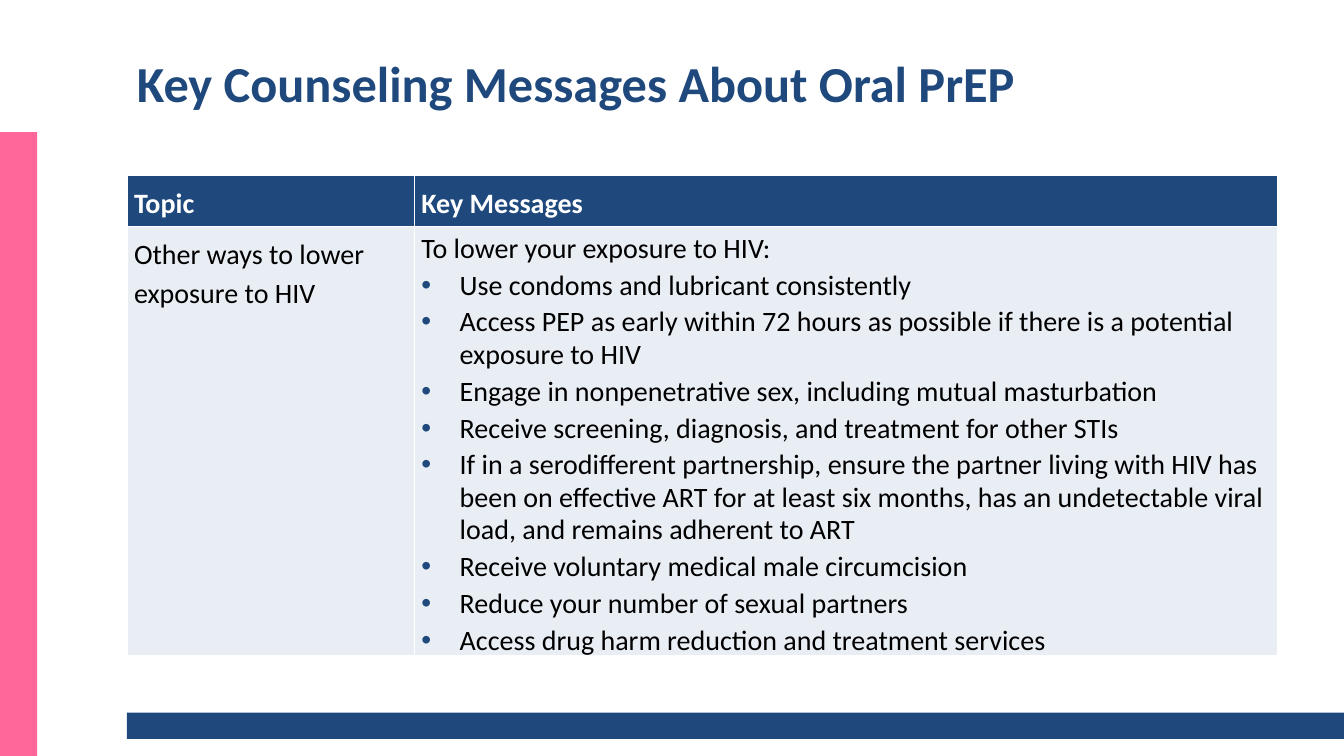
import pptx
import pptx.dml.color
import pptx.enum.shapes
import pptx.enum.text
import pptx.oxml
import pptx.oxml.ns
import pptx.util
from pptx.util import Inches

NAVY, PINK, PALE, WHITE, BLACK = "1F497D", "FF6699", "E9EDF4", "FFFFFF", "000000"
LEFT, WIDTH = 1.26, 11.41
HANGING = 0.38
PREVENTION_MESSAGES = [
    "Use condoms and lubricant consistently",
    "Access PEP as early within 72 hours as possible if there is a potential exposure to HIV",
    "Engage in nonpenetrative sex, including mutual masturbation",
    "Receive screening, diagnosis, and treatment for other STIs",
    "If in a serodifferent partnership, ensure the partner living with HIV has been on "
    "effective ART for at least six months, has an undetectable viral load, and remains "
    "adherent to ART",
    "Receive voluntary medical male circumcision",
    "Reduce your number of sexual partners",
    "Access drug harm reduction and treatment services",
]


def paint(target, color):
    """Fill a shape or table cell with a solid hex colour."""
    target.fill.solid()
    target.fill.fore_color.rgb = pptx.dml.color.RGBColor.from_string(color)


def add_bar(page, left, top, width, height, color):
    """Add a plain coloured rectangle."""
    bar = page.shapes.add_shape(
        pptx.enum.shapes.MSO_SHAPE.RECTANGLE,
        Inches(left), Inches(top), Inches(width), Inches(height))
    paint(bar, color)
    bar.line.fill.background()
    bar.shadow.inherit = False


def add_drawing_element(parent, markup, index=None):
    """Insert a DrawingML element into its parent."""
    tag, rest = markup.split(" ", 1)
    element = pptx.oxml.parse_xml(f"{tag} {pptx.oxml.ns.nsdecls('a')} {rest}")
    parent.insert(len(parent) if index is None else index, element)


def write(para, text, size=20, color=BLACK, bold=False, spacing=1.0, before=0, bullet=False):
    """Write one formatted paragraph."""
    para.alignment = pptx.enum.text.PP_ALIGN.LEFT
    para.line_spacing = spacing
    para.space_before = pptx.util.Pt(before)
    span = para.add_run()
    span.text = text
    span.font.name = "Calibri"
    span.font.size = pptx.util.Pt(size)
    span.font.bold = bold
    span.font.color.rgb = pptx.dml.color.RGBColor.from_string(color)
    if bullet:
        properties = para._p.get_or_add_pPr()
        properties.set("marL", str(Inches(HANGING)))
        properties.set("indent", str(-Inches(HANGING)))
        add_drawing_element(properties, f'<a:buClr ><a:srgbClr val="{NAVY}"/></a:buClr>')
        add_drawing_element(properties, '<a:buFont typeface="Arial"/>')
        add_drawing_element(properties, '<a:buChar char="•"/>')


def add_title(page, text):
    """Add the slide heading."""
    box = page.shapes.add_textbox(Inches(LEFT), Inches(0.35), Inches(WIDTH), Inches(0.94))
    box.text_frame.word_wrap = True
    box.text_frame.vertical_anchor = pptx.enum.text.MSO_ANCHOR.MIDDLE
    write(box.text_frame.paragraphs[0], text, size=36, color=NAVY, bold=True)


def format_cell(cell, color):
    """Set the fill, margins and white borders of a cell."""
    cell.margin_left = cell.margin_right = Inches(0.07)
    cell.margin_top = cell.margin_bottom = Inches(0.06)
    paint(cell, color)
    for index, side in enumerate(("lnL", "lnR", "lnT", "lnB")):
        add_drawing_element(
            cell._tc.get_or_add_tcPr(),
            f'<a:{side} w="{pptx.util.Pt(1)}"><a:solidFill><a:srgbClr val="{WHITE}"/>'
            f'</a:solidFill></a:{side}>', index)


def add_message_table(page):
    """Add the table of topics and key messages."""
    table = page.shapes.add_table(
        2, 2, Inches(LEFT), Inches(1.74), Inches(WIDTH), Inches(4.52)).table
    for column, width in zip(table.columns, (2.85, 8.56)):
        column.width = Inches(width)
    for row, height, color in zip(table.rows, (0.48, 4.04), (NAVY, PALE)):
        row.height = Inches(height)
        for cell in row.cells:
            format_cell(cell, color)
    for index, heading in enumerate(("Topic", "Key Messages")):
        write(table.cell(0, index).text_frame.paragraphs[0], heading,
              color=WHITE, bold=True, spacing=1.15)
    write(table.cell(1, 0).text_frame.paragraphs[0],
          "Other ways to lower exposure to HIV", spacing=1.15)
    messages = table.cell(1, 1).text_frame
    write(messages.paragraphs[0], "To lower your exposure to HIV:", spacing=0.95)
    for message in PREVENTION_MESSAGES:
        write(messages.add_paragraph(), message, spacing=0.95, before=3, bullet=True)


def main():
    """Build and save the slide."""
    deck = pptx.Presentation()
    deck.slide_width, deck.slide_height = Inches(13.33), Inches(7.5)
    page = deck.slides.add_slide(deck.slide_layouts[6])
    add_bar(page, 0, 1.31, 0.37, 6.19, PINK)
    add_bar(page, LEFT, 7.07, 12.07, 0.26, NAVY)
    add_title(page, "Key Counseling Messages About Oral PrEP")
    add_message_table(page)
    deck.save("out.pptx")


if __name__ == "__main__":
    main()
